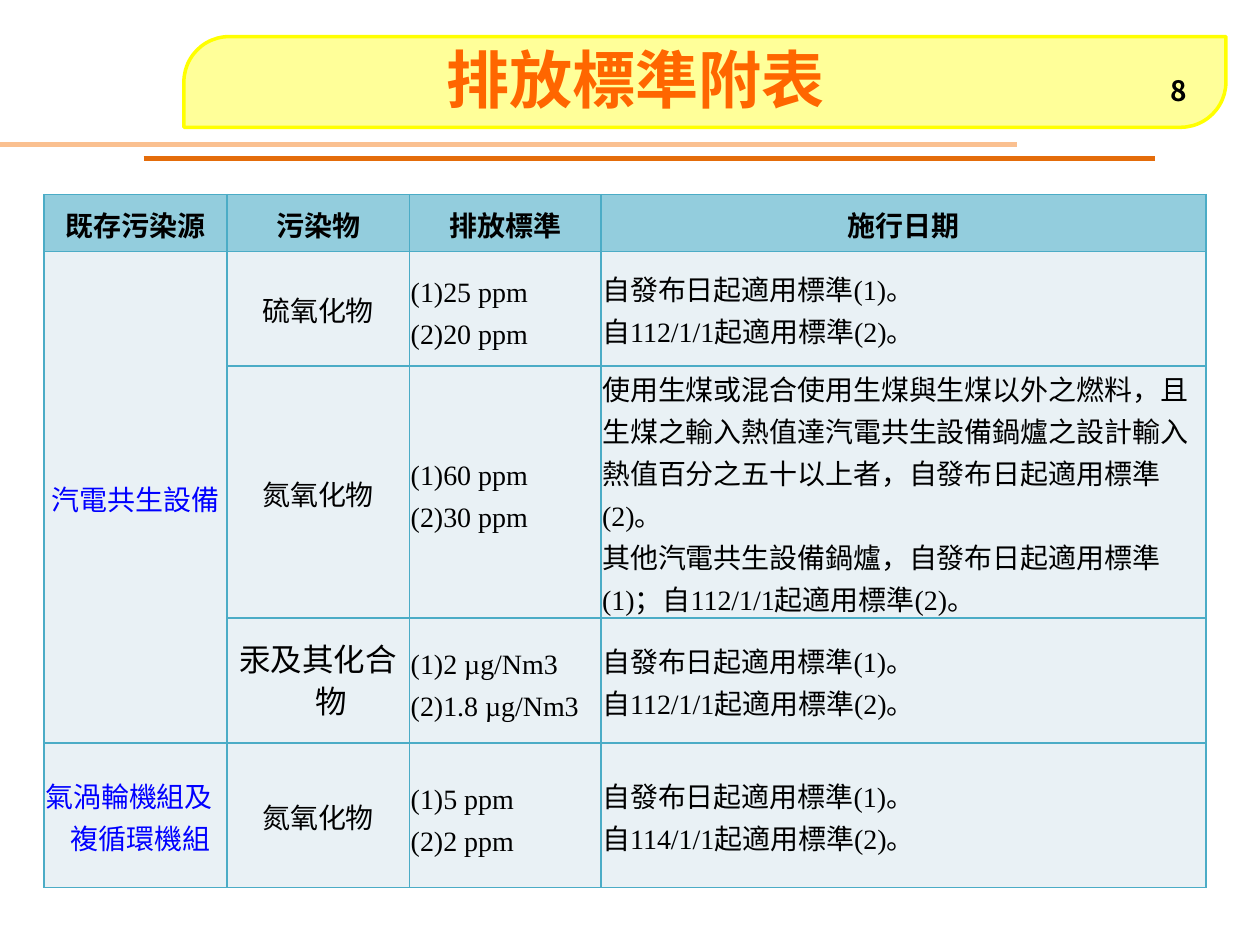
from pptx import Presentation
from pptx.dml.color import RGBColor as Color
from pptx.enum.shapes import MSO_CONNECTOR as Connector, MSO_SHAPE as Shape
from pptx.enum.text import MSO_ANCHOR as Anchor, PP_ALIGN as Align
from pptx.oxml.ns import qn
from pptx.util import Inches, Pt
from lxml.etree import SubElement
from dataclasses import dataclass


@dataclass(frozen=True)
class Theme:
    title: str = "FF6600"
    banner: str = "FFFF99"
    banner_line: str = "FFFF00"
    light_rule: str = "FAC090"
    dark_rule: str = "E46C0A"
    header: str = "93CDDD"
    body: str = "E9F1F5"
    border: str = "4BACC6"
    text: str = "000000"
    source: str = "0000FF"
    sans: str = "Noto Sans CJK SC"
    serif: str = "Times New Roman"
    plain: str = "Arial"
    title_size: int = 36
    large_size: int = 18
    text_size: int = 16


theme = Theme()
presentation = Presentation()
presentation.slide_width = Inches(10)
presentation.slide_height = Inches(7.5)
column = presentation.slide_width / 100
row = presentation.slide_height / 100
slide = presentation.slides.add_slide(presentation.slide_layouts[6])


def place(left, top, width, height):
    return [int(left * column), int(top * row), int(width * column), int(height * row)]


def style(paragraph, face, size, color, bold, align):
    font = paragraph.font
    font.name, font.size, font.bold = face, Pt(size), bold
    font.color.rgb = Color.from_string(color)
    SubElement(font._element, qn("a:ea")).set("typeface", theme.sans)
    paragraph.alignment = align


for start, end, level, color in [
    (0, 80.7, 15.33, theme.light_rule),
    (11.4, 91.7, 16.8, theme.dark_rule),
]:
    left, top, right, bottom = place(start, level, end, level)
    rule = slide.shapes.add_connector(Connector.STRAIGHT, left, top, right, bottom)
    rule.line.color.rgb = Color.from_string(color)
    rule.line.width = Pt(3)
    SubElement(rule._element.spPr, qn("a:effectLst"))

banner = slide.shapes.add_shape(Shape.ROUND_2_DIAG_RECTANGLE, *place(14.6, 3.87, 82.7, 9.6))
banner.adjustments[0] = 0.5
banner.adjustments[1] = 0
banner.shadow.inherit = False
banner.fill.solid()
banner.fill.fore_color.rgb = Color.from_string(theme.banner)
banner.line.color.rgb = Color.from_string(theme.banner_line)
banner.line.width = Pt(2)

for text, area, size, color, align in [
    ("排放標準附表", (7.8, 3.07, 85.2, 10.53), theme.title_size, theme.title, Align.CENTER),
    ("8", (89.4, 6.93, 5.8, 5.33), theme.text_size, theme.text, Align.RIGHT),
]:
    frame = slide.shapes.add_textbox(*place(*area)).text_frame
    frame.word_wrap = True
    frame.vertical_anchor = Anchor.MIDDLE
    frame.text = text
    style(frame.paragraphs[0], theme.sans, size, color, True, align)

from_release = "自發布日起適用標準(1)。\n自112/1/1起適用標準(2)。"
long_rule = (
    "使用生煤或混合使用生煤與生煤以外之燃料，且生煤之輸入熱值達汽電共生設備鍋爐之設計輸入熱值"
    "百分之五十以上者，自發布日起適用標準(2)。\n"
    "其他汽電共生設備鍋爐，自發布日起適用標準(1)；自112/1/1起適用標準(2)。"
)
mercury = "汞及其化合物"
turbine = "氣渦輪機組及複循環機組"
records = [
    ("既存污染源", "污染物", "排放標準", "施行日期"),
    ("汽電共生設備", "硫氧化物", "(1)25 ppm\n(2)20 ppm", from_release),
    ("", "氮氧化物", "(1)60 ppm\n(2)30 ppm", long_rule),
    ("", mercury, "(1)2 µg/Nm3\n(2)1.8 µg/Nm3", from_release),
    (turbine, "氮氧化物", "(1)5 ppm\n(2)2 ppm", from_release.replace("112", "114")),
]
column_shares = [14.5, 14.5, 15.2, 48]
row_shares = [6, 12.13, 23.6, 13.2, 15.33]
body_aligns = [Align.CENTER, Align.CENTER, Align.JUSTIFY, Align.LEFT]

area = place(3.5, 20.6, sum(column_shares), sum(row_shares))
table = slide.shapes.add_table(len(row_shares), len(column_shares), *area).table
for table_column, share in zip(table.columns, column_shares):
    table_column.width = int(share * column)
for table_row, share in zip(table.rows, row_shares):
    table_row.height = int(share * row)
table.cell(1, 0).merge(table.cell(3, 0))

for row_index, record in enumerate(records):
    is_header = row_index == 0
    for column_index, text in enumerate(record):
        cell = table.cell(row_index, column_index)
        cell.vertical_anchor = Anchor.MIDDLE
        cell.margin_left = cell.margin_right = Inches(0.01)
        cell.margin_top = cell.margin_bottom = 0
        properties = cell._tc.get_or_add_tcPr()
        for side in ("a:lnL", "a:lnR", "a:lnT", "a:lnB"):
            border = SubElement(properties, qn(side), w=str(Pt(1)))
            fill = SubElement(border, qn("a:solidFill"))
            SubElement(fill, qn("a:srgbClr"), val=theme.border)
        cell.fill.solid()
        cell.fill.fore_color.rgb = Color.from_string(theme.header if is_header else theme.body)
        if not text:
            continue
        cell.text = text
        face, size = (theme.plain, theme.large_size) if text == mercury else (theme.serif, theme.text_size)
        color = theme.source if column_index == 0 and not is_header else theme.text
        align = Align.CENTER if is_header else body_aligns[column_index]
        if text == turbine:
            align = Align.LEFT
        for paragraph in cell.text_frame.paragraphs:
            style(paragraph, face, size, color, is_header, align)
            paragraph.line_spacing = Pt(24)
            if text != long_rule:
                indent = paragraph._p.get_or_add_pPr()
                indent.set("marL", str(Inches(0.2)))
                indent.set("indent", str(-Inches(0.2)))

presentation.save("out.pptx")
